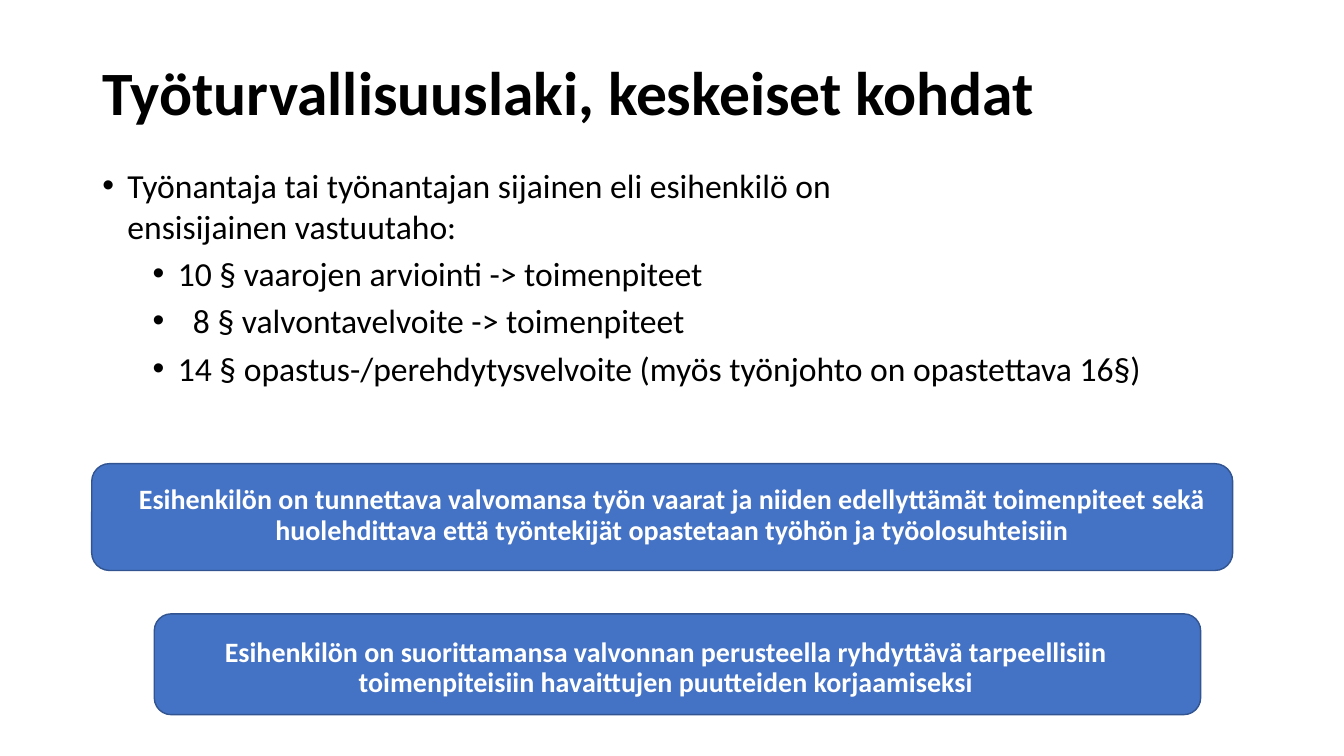
from lxml import etree
from pptx import Presentation
from pptx import util as u
from pptx.dml.color import RGBColor
from pptx.enum import shapes, text
from pptx.oxml.ns import qn

COLORS = {"ink": "000000", "paper": "FFFFFF", "box": "4472C4", "edge": "325491"}
FONT = "Calibri"
TITLE = "Työturvallisuuslaki, keskeiset kohdat"
DUTY = ("Työnantaja tai työnantajan sijainen eli esihenkilö on",
        "ensisijainen vastuutaho:")
SECTIONS = [
    ("10 § vaarojen arviointi -> toimenpiteet", 18),
    ("8 § valvontavelvoite -> toimenpiteet", 28.8),
    ("14 § opastus-/perehdytysvelvoite (myös työnjohto on opastettava 16§)", 18),
]
NOTICES = [
    ("Esihenkilön on tunnettava valvomansa työn vaarat ja niiden edellyttämät "
     "toimenpiteet sekä huolehdittava että työntekijät opastetaan työhön ja "
     "työolosuhteisiin",
     (65.5, 331.2, 815, 76.3), (66, 343.4, 828, 64)),
    ("Esihenkilön on suorittamansa valvonnan perusteella ryhdyttävä "
     "tarpeellisiin toimenpiteisiin havaittujen puutteiden korjaamiseksi",
     (110.2, 438.5, 747.4, 72), (93.6, 452.5, 764, 58)),
]


def color(name):
    return RGBColor.from_string(COLORS[name])


def add_text_frame(s, box, anchor=text.MSO_ANCHOR.TOP):
    tf = s.shapes.add_textbox(*map(u.Pt, box)).text_frame
    tf.word_wrap = True
    tf.vertical_anchor = anchor
    return tf


def add_run(p, words, size, ink="ink", bold=False):
    r = p.add_run()
    r.text = words
    r.font.name = FONT
    r.font.size = u.Pt(size)
    r.font.bold = bold
    r.font.color.rgb = color(ink)


def set_bullet(p, bullet_at, hang):
    pPr = p._p.get_or_add_pPr()
    pPr.set("marL", str(u.Pt(bullet_at + hang)))
    pPr.set("indent", str(-u.Pt(hang)))
    etree.SubElement(pPr, qn("a:buFont")).set("typeface", "Arial")
    etree.SubElement(pPr, qn("a:buChar")).set("char", "•")


def add_title(s, box):
    p = add_text_frame(s, box, text.MSO_ANCHOR.MIDDLE).paragraphs[0]
    p.line_spacing = 0.9
    add_run(p, TITLE, 44, bold=True)


def add_duties(s, box):
    tf = add_text_frame(s, box)
    p = tf.paragraphs[0]
    p.space_before = u.Pt(10)
    set_bullet(p, 0, 18)
    add_run(p, DUTY[0], 24)
    p.add_line_break()
    add_run(p, DUTY[1], 24)
    for words, hang in SECTIONS:
        p = tf.add_paragraph()
        p.level = 1
        p.space_before = u.Pt(5)
        set_bullet(p, 36, hang)
        add_run(p, words, 24)


def add_notice(s, words, box, text_box):
    sp = s.shapes.add_shape(shapes.MSO_SHAPE.ROUNDED_RECTANGLE, *map(u.Pt, box))
    sp.shadow.inherit = False
    sp.fill.solid()
    sp.fill.fore_color.rgb = color("box")
    sp.line.color.rgb = color("edge")
    sp.line.width = u.Pt(1)
    p = add_text_frame(s, text_box).paragraphs[0]
    p.alignment = text.PP_ALIGN.CENTER
    p.line_spacing = 0.9
    p.space_before = u.Pt(10)
    add_run(p, words, 20, "paper", True)


def main():
    prs = Presentation()
    prs.slide_width, prs.slide_height = u.Pt(960), u.Pt(540)
    s = prs.slides.add_slide(prs.slide_layouts[6])
    add_title(s, (66, 28.8, 828, 78.3))
    add_duties(s, (66, 114.5, 878.4, 200))
    for notice in NOTICES:
        add_notice(s, *notice)
    prs.save("out.pptx")


if __name__ == "__main__":
    main()
